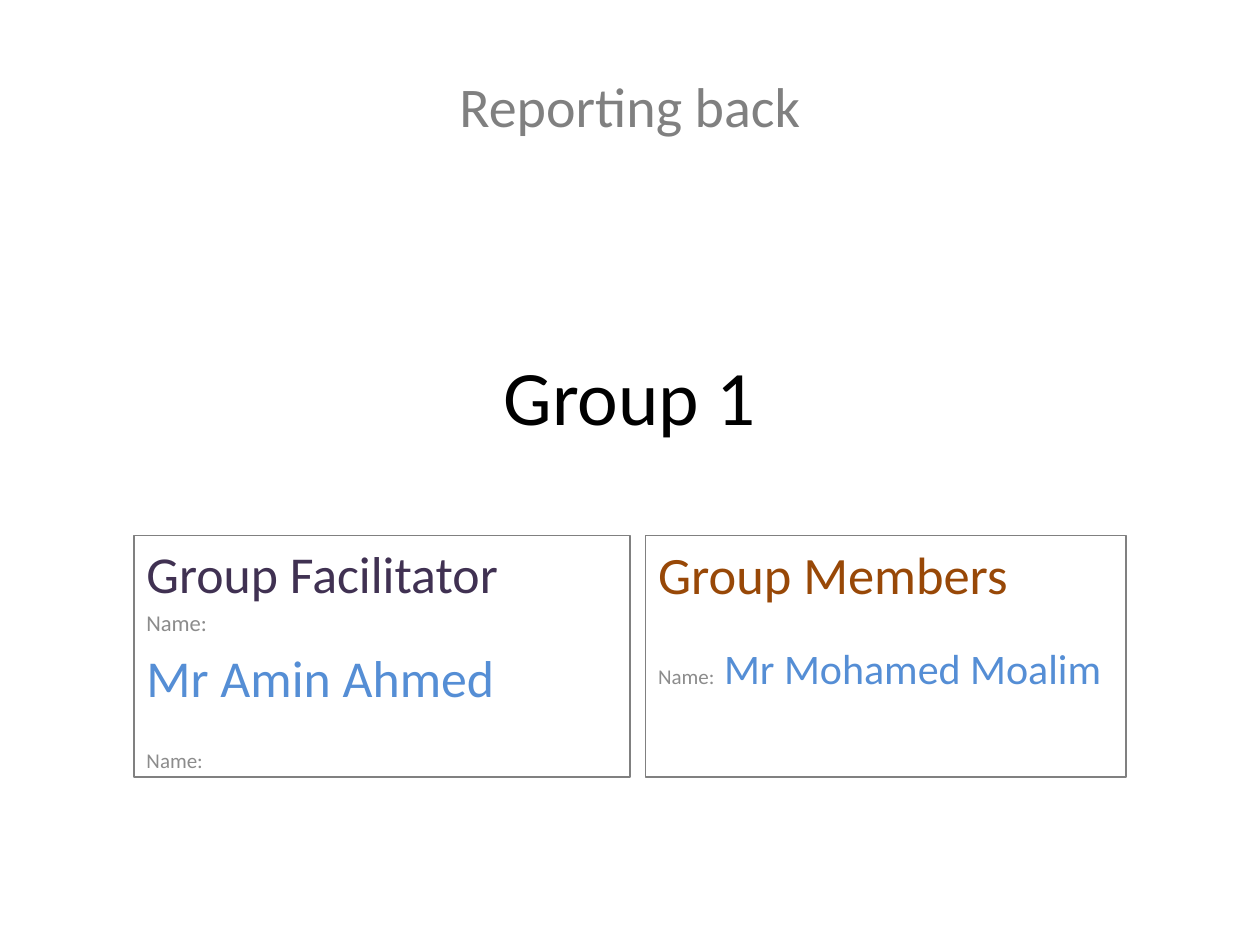
from pptx import Presentation
from pptx.dml.color import RGBColor as Rgb
from pptx.enum.shapes import MSO_SHAPE as Shape
from pptx.enum.text import MSO_ANCHOR as Anchor, MSO_AUTO_SIZE as Fit, PP_ALIGN as Align
from pptx.util import Pt

HUES = {"black": "000000", "grey": "808080", "label": "8C8C8C",
        "plum": "403152", "rust": "984807", "blue": "558ED5"}


def place(shape, box):
    """Move a shape to a box given as left, top, width, height in points."""
    shape.left, shape.top, shape.width, shape.height = map(Pt, box)


def write(shape, lines, align, anchor=Anchor.TOP):
    """Fill a shape with lines, each a gap before and a list of (text, size, hue)."""
    frame = shape.text_frame
    frame.word_wrap = True
    frame.auto_size = Fit.NONE
    frame.vertical_anchor = anchor
    for i, (gap, parts) in enumerate(lines):
        para = frame.add_paragraph() if i else frame.paragraphs[0]
        para.alignment = align
        para.space_before = Pt(gap)
        for text, size, hue in parts:
            run = para.add_run()
            run.text = text
            run.font.name = "Calibri"
            run.font.size = Pt(size)
            run.font.color.rgb = Rgb.from_string(HUES[hue])


def head(slide, box):
    """Write the line at the top of the slide."""
    note = slide.shapes.add_textbox(*map(Pt, box))
    write(note, [(0, [("Reporting back", 32, "grey")])], Align.CENTER)


def title(slide, box):
    """Write the group name in the title placeholder."""
    name = slide.shapes.title
    place(name, box)
    write(name, [(0, [("Group 1", 44, "black")])], Align.CENTER, Anchor.MIDDLE)


def card(shape, box, lines):
    """Turn a shape into a thinly framed card of left-aligned lines."""
    place(shape, box)
    shape.fill.background()
    shape.line.color.rgb = Rgb.from_string(HUES["grey"])
    shape.line.width = Pt(0.75)
    write(shape, lines, Align.LEFT)


def cards(slide, box):
    """Set the facilitator and member cards side by side in the box."""
    left, top, width, height = box
    first, gap = 283.5, 9
    lead = slide.placeholders[1]
    card(lead, (left, top, first, height), [
        (0, [("Group Facilitator", 29.6, "plum")]),
        (2.6, [("Name:", 12.9, "label")]),
        (5.9, [("Mr Amin Ahmed", 29.6, "blue")]),
        (22.8, [("Name:", 12, "label")])])
    team = slide.shapes.add_shape(Shape.RECTANGLE, 0, 0, 0, 0)
    team.shadow.inherit = False
    shift = first + gap
    card(team, (left + shift, top, width - shift, height), [
        (0, [("Group Members", 30, "rust")]),
        (21.8, [("Name:", 12, "label"), (" Mr Mohamed Moalim", 24, "blue")])])


def main():
    """Build the slide and save it."""
    deck = Presentation()
    deck.slide_width, deck.slide_height = Pt(720), Pt(540)
    slide = deck.slides.add_slide(deck.slide_layouts[0])
    title(slide, (54, 167.75, 612, 115.75))
    cards(slide, (76.5, 306, 567, 138))
    head(slide, (76.5, 37.5, 567, 62.5))
    deck.save("out.pptx")


if __name__ == "__main__":
    main()
